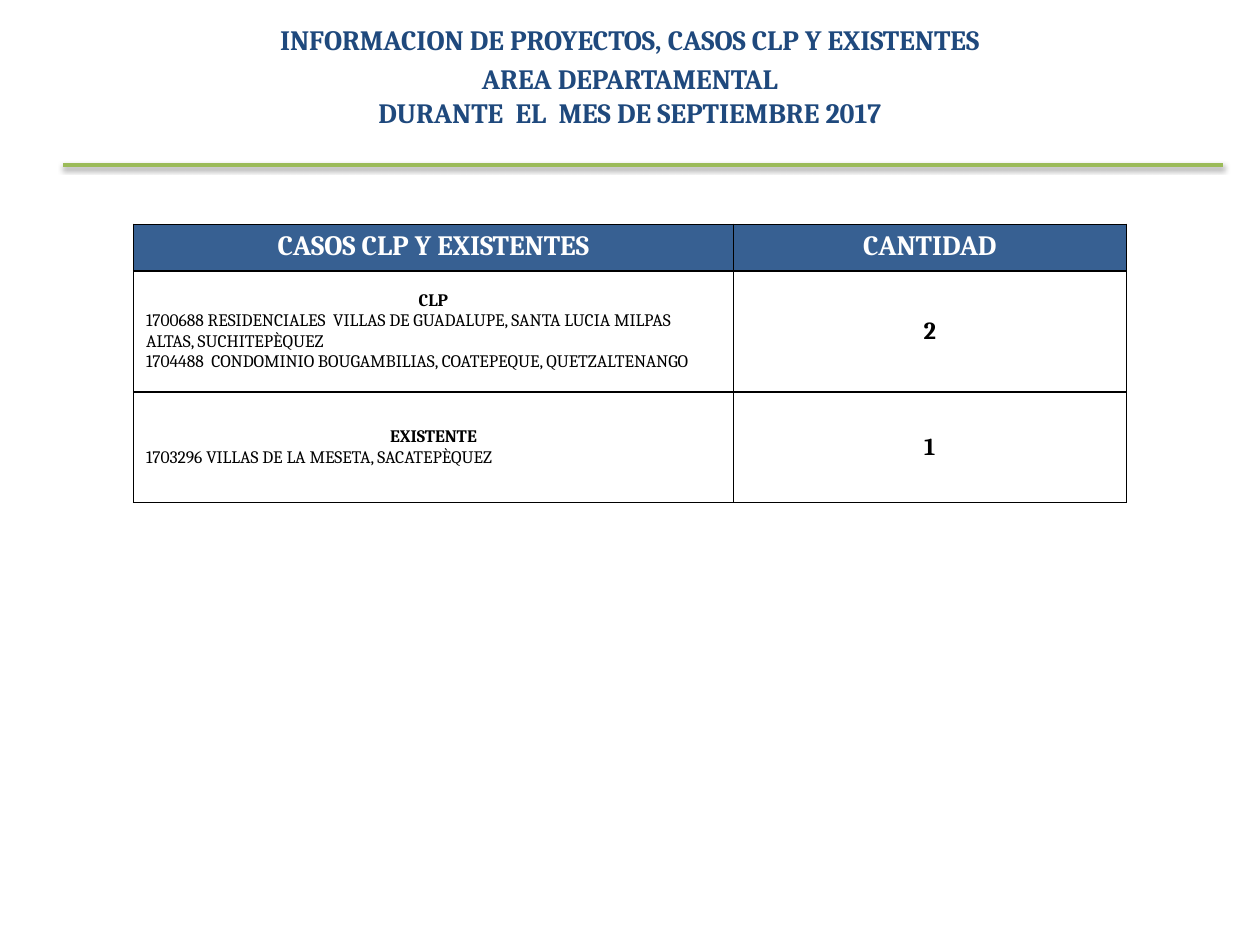
from lxml import etree
from pptx import Presentation
from pptx.dml.color import RGBColor
from pptx.enum.shapes import MSO_CONNECTOR
from pptx.enum.text import MSO_ANCHOR, MSO_AUTO_SIZE, PP_ALIGN
from pptx.oxml.ns import qn
from pptx.util import Inches, Pt

CENTER, LEFT = PP_ALIGN.CENTER, PP_ALIGN.LEFT
TOP, MIDDLE = MSO_ANCHOR.TOP, MSO_ANCHOR.MIDDLE
NO_AUTOFIT = MSO_AUTO_SIZE.NONE
STRAIGHT = MSO_CONNECTOR.STRAIGHT

NAVY, BLUE, GREEN = "1F497D", "376092", "9BBB59"
BLACK, WHITE = "000000", "FFFFFF"


def color(value):
    return RGBColor.from_string(value)


def add_element(parent, tag, **attributes):
    return etree.SubElement(parent, qn(tag), attributes)


class SlideBuilder:
    font_name = "Cambria"

    def __init__(self, presentation):
        self.slide = presentation.slides.add_slide(presentation.slide_layouts[5])

    def add_run(self, paragraph, text, size, font_color, bold):
        run = paragraph.add_run()
        run.text = text
        font = run.font
        font.name, font.size, font.bold = self.font_name, Pt(size), bold
        font.color.rgb = color(font_color)

    def add_title(self, left, top, width, height, paragraphs):
        title = self.slide.shapes.title
        title.left, title.top = Inches(left), Inches(top)
        title.width, title.height = Inches(width), Inches(height)
        frame = title.text_frame
        frame.word_wrap, frame.auto_size = True, NO_AUTOFIT
        frame.vertical_anchor = TOP
        for index, lines in enumerate(paragraphs):
            paragraph = frame.paragraphs[0] if index == 0 else frame.add_paragraph()
            paragraph.alignment = CENTER
            if index:
                paragraph.space_before = Pt(3.2)
            else:
                # The first line sits slightly left of centre
                properties = paragraph._p.get_or_add_pPr()
                properties.set("marL", "0")
                properties.set("indent", str(-Inches(0.16)))
            for number, line in enumerate(lines):
                if number:
                    paragraph.add_line_break()
                self.add_run(paragraph, line, 16, NAVY, True)

    def add_rule(self, left, right, y):
        rule = self.slide.shapes.add_connector(
            STRAIGHT, Inches(left), Inches(y), Inches(right), Inches(y))
        rule.line.color.rgb = color(GREEN)
        rule.line.width = Pt(2)
        effects = add_element(rule._element.spPr, "a:effectLst")
        shadow = add_element(effects, "a:outerShdw", blurRad=str(Pt(3.1)),
                             dist=str(Pt(1.6)), dir="5400000", rotWithShape="0")
        shadow_color = add_element(shadow, "a:srgbClr", val=BLACK)
        add_element(shadow_color, "a:alpha", val="38000")

    def add_table(self, left, top, column_widths, row_heights, rows):
        table = self.slide.shapes.add_table(
            len(rows), len(column_widths), Inches(left), Inches(top),
            Inches(sum(column_widths)), Inches(sum(row_heights))).table
        for column, width in zip(table.columns, column_widths):
            column.width = Inches(width)
        for row, height in zip(table.rows, row_heights):
            row.height = Inches(height)
        for row_index, row in enumerate(rows):
            for column_index, paragraphs in enumerate(row):
                self.fill_cell(table.cell(row_index, column_index), paragraphs,
                               row_index == 0)

    def fill_cell(self, cell, paragraphs, header):
        cell.vertical_anchor = TOP if header else MIDDLE
        self.add_borders(cell)
        cell.fill.solid()
        cell.fill.fore_color.rgb = color(BLUE if header else WHITE)
        frame = cell.text_frame
        for index, (text, size, bold) in enumerate(paragraphs):
            paragraph = frame.paragraphs[0] if index == 0 else frame.add_paragraph()
            paragraph.alignment = CENTER if bold else LEFT
            self.add_run(paragraph, text, size, WHITE if header else BLACK, bold)

    def add_borders(self, cell):
        properties = cell._tc.get_or_add_tcPr()
        for side in ("a:lnL", "a:lnR", "a:lnT", "a:lnB"):
            border = add_element(properties, side, w=str(Pt(1)))
            add_element(add_element(border, "a:solidFill"), "a:srgbClr", val=BLACK)


def main():
    presentation = Presentation()
    presentation.slide_width, presentation.slide_height = Inches(10), Inches(7.5)
    builder = SlideBuilder(presentation)

    # Cases table: each cell lists (text, size, bold) paragraphs
    builder.add_table(1.06, 1.78, (4.76, 3.12), (0.37, 0.96, 0.88), [
        [[("CASOS CLP Y EXISTENTES", 16, True)], [("CANTIDAD", 16, True)]],
        [[("CLP", 10, True),
          ("1700688 RESIDENCIALES  VILLAS DE GUADALUPE, SANTA LUCIA MILPAS ALTAS, "
           "SUCHITEPÈQUEZ", 10, False),
          ("1704488  CONDOMINIO BOUGAMBILIAS, COATEPEQUE, QUETZALTENANGO", 10, False)],
         [("2", 14, True)]],
        [[("EXISTENTE", 10, True),
          ("1703296 VILLAS DE LA MESETA, SACATEPÈQUEZ", 10, False)],
         [("1", 14, True)]],
    ])

    # Heading and the rule below it
    builder.add_title(0.5, 0.13, 9, 0.89, [
        ["INFORMACION DE PROYECTOS, CASOS CLP Y EXISTENTES"],
        ["AREA DEPARTAMENTAL", "DURANTE  EL  MES DE SEPTIEMBRE 2017"],
    ])
    builder.add_rule(0.5, 9.71, 1.31)

    presentation.save("out.pptx")


if __name__ == "__main__":
    main()
